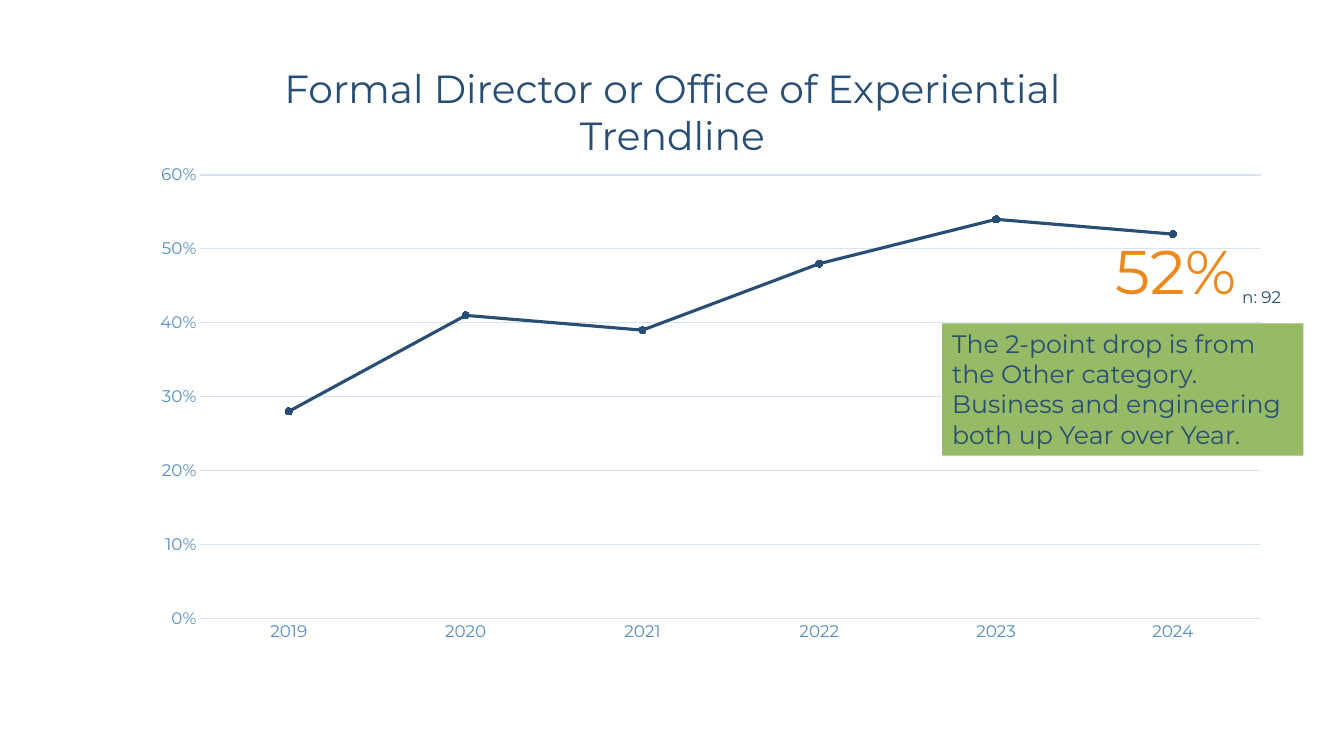
from pptx import Presentation
from pptx.chart.data import CategoryChartData
from pptx.dml.color import RGBColor
from pptx.enum.chart import XL_CHART_TYPE, XL_MARKER_STYLE, XL_TICK_MARK
from pptx.enum.shapes import MSO_SHAPE
from pptx.enum.text import MSO_ANCHOR, MSO_AUTO_SIZE, PP_ALIGN
from pptx.oxml import parse_xml
from pptx.oxml.ns import nsdecls, qn
from pptx.util import Pt

LINE_MARKERS = XL_CHART_TYPE.LINE_MARKERS
CIRCLE = XL_MARKER_STYLE.CIRCLE
NO_TICK = XL_TICK_MARK.NONE
RECT = MSO_SHAPE.RECTANGLE
TOP = MSO_ANCHOR.TOP
NO_FIT = MSO_AUTO_SIZE.NONE
LEFT, CENTER = PP_ALIGN.LEFT, PP_ALIGN.CENTER

NAVY = RGBColor(0x29, 0x4E, 0x73)
BLUE = RGBColor(0x55, 0x8C, 0xC3)
PALE = RGBColor(0xD8, 0xE4, 0xF1)
ORANGE = RGBColor(0xEB, 0x89, 0x1C)
GREEN = RGBColor(0x96, 0xBA, 0x65)

YEARS = ["2019", "2020", "2021", "2022", "2023", "2024"]
SHARES = [0.28, 0.41, 0.39, 0.48, 0.54, 0.52]


def apply(target, formats):
    for name, value in formats.items():
        setattr(target, name, value)


class Deck:
    font = "Montserrat"

    def __init__(self, width, height):
        self.prs = Presentation()
        self.prs.slide_width, self.prs.slide_height = Pt(width), Pt(height)

    def add_slide(self):
        title_only = self.prs.slide_layouts[5]
        self.s = self.prs.slides.add_slide(title_only)

    def style_font(self, font, size, color):
        apply(font, {"name": self.font, "size": Pt(size), "bold": False})
        font.color.rgb = color

    def fill_text(self, sp, text, size, color, align):
        tf = sp.text_frame
        apply(tf, {"word_wrap": True, "auto_size": NO_FIT, "vertical_anchor": TOP})
        p = tf.paragraphs[0]
        p.alignment = align
        r = p.add_run()
        r.text = text
        self.style_font(r.font, size, color)

    def title(self, box, text, size=28, color=NAVY):
        sp = self.s.shapes.title
        apply(sp, dict(zip(("left", "top", "width", "height"), map(Pt, box))))
        self.fill_text(sp, text, size, color, CENTER)

    def text(self, box, text, size, color=NAVY):
        sp = self.s.shapes.add_textbox(*map(Pt, box))
        self.fill_text(sp, text, size, color, CENTER)

    def callout(self, box, text, size=18, color=NAVY, fill=GREEN):
        sp = self.s.shapes.add_shape(RECT, *map(Pt, box))
        sp.shadow.inherit = False
        sp.fill.solid()
        sp.fill.fore_color.rgb = fill
        sp.line.fill.background()
        self.fill_text(sp, text, size, color, LEFT)

    def style_line(self, line, width, color):
        line.width = Pt(width)
        line.color.rgb = color

    def place_plot(self, chart, x, y, w, h):
        """Fix the inner plot area, in fractions of the chart."""
        area = chart._chartSpace.chart.plotArea
        for layout in area.findall(qn("c:layout")):
            area.remove(layout)
        sizes = "".join(f'<c:{tag} val="{value}"/>' for tag, value in
                        zip("xywh", (x, y, w, h)))
        area.insert(0, parse_xml(
            f'<c:layout {nsdecls("c")}><c:manualLayout>'
            '<c:layoutTarget val="inner"/><c:xMode val="edge"/>'
            f'<c:yMode val="edge"/>{sizes}</c:manualLayout></c:layout>'))

    def line_chart(self, box, categories, name, values, plot_area):
        data = CategoryChartData(number_format="0%")
        data.categories = categories
        data.add_series(name, values)
        frame = self.s.shapes.add_chart(LINE_MARKERS, *map(Pt, box), data)
        chart = frame.chart
        apply(chart, {"has_legend": False, "has_title": False})
        self.style_font(chart.font, 10, NAVY)
        self.place_plot(chart, *plot_area)
        chart.plots[0].vary_by_categories = False

        years, shares = chart.category_axis, chart.value_axis
        for axis in (years, shares):
            apply(axis, {"major_tick_mark": NO_TICK, "minor_tick_mark": NO_TICK})
            self.style_font(axis.tick_labels.font, 12, BLUE)
        self.style_line(years.format.line, 0.75, PALE)
        apply(shares, {"minimum_scale": 0, "maximum_scale": 0.6,
                       "major_unit": 0.1, "has_major_gridlines": True})
        apply(shares.tick_labels, {"number_format": "0%",
                                   "number_format_is_linked": False})
        shares.format.line.fill.background()
        self.style_line(shares.major_gridlines.format.line, 0.75, PALE)

        series = chart.plots[0].series[0]
        series.smooth = False
        self.style_line(series.format.line, 2.25, NAVY)
        marker = series.marker
        apply(marker, {"style": CIRCLE, "size": 5})
        marker.format.fill.solid()
        marker.format.fill.fore_color.rgb = NAVY
        self.style_line(marker.format.line, 0.75, NAVY)


def main():
    deck = Deck(960, 540)
    deck.add_slide()
    deck.title((147, 42.5, 666.5, 75),
               "Formal Director or Office of Experiential Trendline")
    deck.line_chart((59, 107.3, 842.4, 355.7), YEARS, "Series 1", SHARES,
                    (0.1, 0.05, 0.9, 0.89))
    deck.text((766, 162.7, 148.5, 60.5), "52%", 44, ORANGE)
    deck.callout((673, 231, 258, 94.5),
                 "The 2-point drop is from the Other category. "
                 "Business and engineering both up Year over Year.")
    deck.text((862, 201.6, 78.5, 21.8), "n: 92", 12)
    deck.prs.save("out.pptx")


if __name__ == "__main__":
    main()
